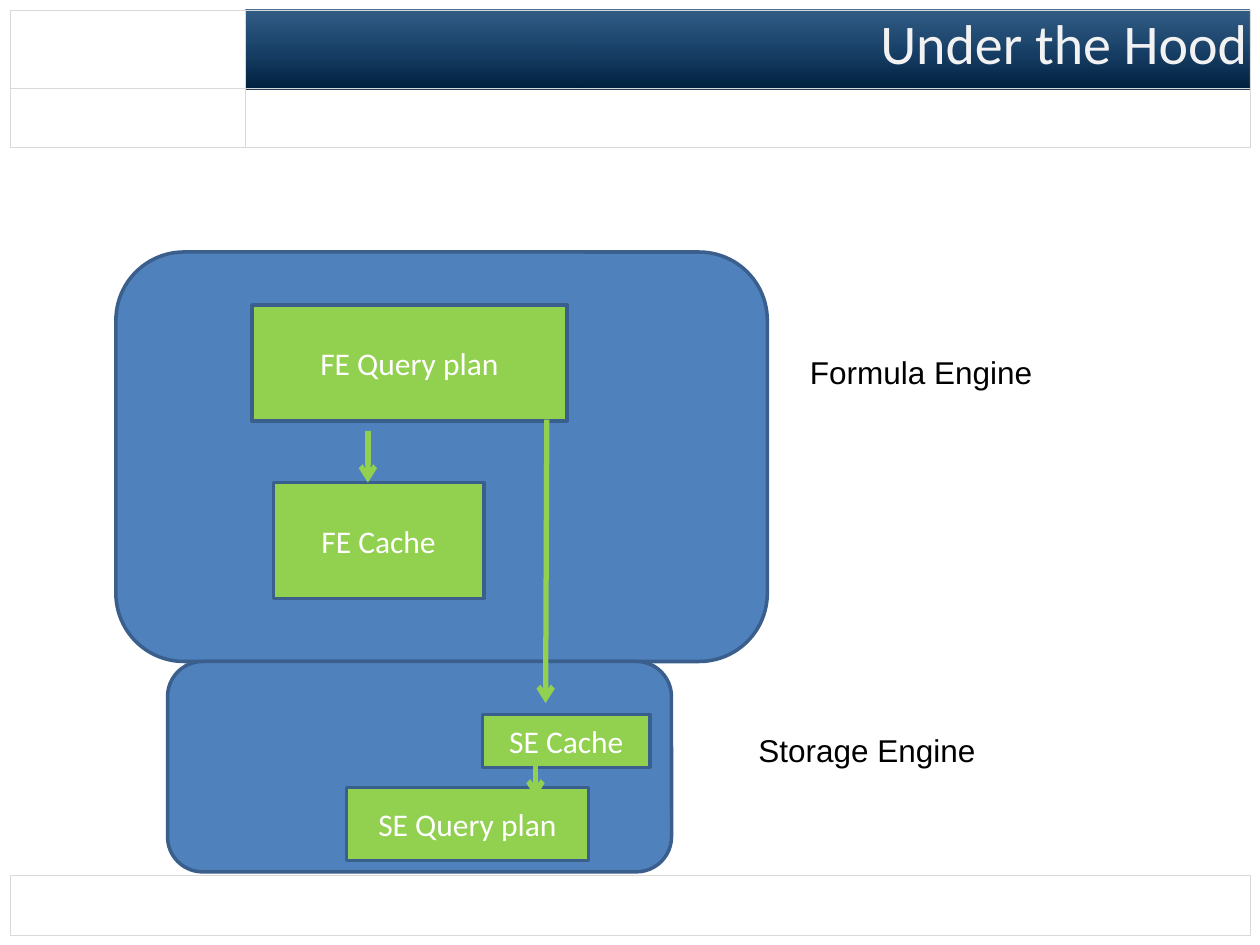
from lxml import etree
from pptx import Presentation
from pptx.dml.color import RGBColor
from pptx.enum.shapes import MSO_CONNECTOR as Connector, MSO_SHAPE as Shape
from pptx.enum.text import MSO_ANCHOR as Anchor, MSO_AUTO_SIZE as AutoSize, PP_ALIGN as Align
from pptx.oxml.ns import qn
from pptx.util import Inches, Pt

COLORS = {
    "frame": "D9D9D9",
    "engine": "4F81BD",
    "outline": "3A5F8C",
    "step": "92D050",
    "white": "FFFFFF",
    "title": "F2F2F2",
    "black": "000000",
    "banner_dark": "00203E",
    "banner_middle": "002E59",
    "banner_light": "003669",
}


def rgb(name):
    return RGBColor.from_string(COLORS[name])


def write_text(shape, text, font="Calibri", size=18, color="white",
               align=Align.CENTER, anchor=Anchor.MIDDLE):
    frame = shape.text_frame
    frame.word_wrap = True
    frame.vertical_anchor = anchor
    paragraph = frame.paragraphs[0]
    paragraph.alignment = align
    run = paragraph.add_run()
    run.text = text
    run.font.name = font
    run.font.size = Pt(size)
    run.font.color.rgb = rgb(color)


def add_box(slide, box, kind=Shape.RECTANGLE, fill=None, line=None, width=2):
    shape = slide.shapes.add_shape(kind, *map(Inches, box))
    shape.shadow.inherit = False
    if fill:
        shape.fill.solid()
        shape.fill.fore_color.rgb = rgb(fill)
    else:
        shape.fill.background()
    if line:
        shape.line.color.rgb = rgb(line)
        shape.line.width = Pt(width)
    else:
        shape.line.fill.background()
    return shape


def add_text_box(slide, box, text, **text_format):
    shape = slide.shapes.add_textbox(*map(Inches, box))
    write_text(shape, text, **text_format)
    return shape


def add_line(slide, start, end, color, width, arrow=False):
    line = slide.shapes.add_connector(Connector.STRAIGHT, *map(Inches, start + end))
    line.line.color.rgb = rgb(color)
    line.line.width = Pt(width)
    if arrow:
        etree.SubElement(line.line._get_or_add_ln(), qn("a:tailEnd"), type="arrow")
    etree.SubElement(line._element.spPr, qn("a:effectLst"))


def fill_gradient(shape, stops, angle):
    shape.fill.gradient()
    gradient = shape._element.spPr.find(qn("a:gradFill"))
    stop_list = gradient.find(qn("a:gsLst"))
    for stop in list(stop_list):
        stop_list.remove(stop)
    for position, color, opacity in stops:
        stop = etree.SubElement(stop_list, qn("a:gs"), pos=str(position * 1000))
        value = etree.SubElement(stop, qn("a:srgbClr"), val=COLORS[color])
        etree.SubElement(value, qn("a:alpha"), val=str(opacity * 1000))
    shape.fill.gradient_angle = angle


def add_frame(slide, box):
    left, top, width, height = box
    title_height, band_height, split = 0.62, 0.47, 1.87
    banner = add_box(slide, (left + split, top, width - split, title_height + 0.01))
    fill_gradient(banner, [(0, "banner_dark", 100), (50, "banner_middle", 90),
                           (100, "banner_light", 80)], 90)
    bands = [(top, title_height), (top + title_height, band_height),
             (top + height - band_height, band_height)]
    for band_top, band in bands:
        add_box(slide, (left, band_top, width, band), line="frame", width=0.25)
    add_line(slide, (left + split, top),
             (left + split, top + title_height + band_height), "frame", 0.25)


def add_engine(slide, box, steps, label, label_box):
    left, top = box[:2]
    add_box(slide, box, Shape.ROUNDED_RECTANGLE, "engine", "outline")
    for text, (x, y, width, height) in steps:
        step = add_box(slide, (left + x, top + y, width, height),
                       fill="step", line="outline")
        write_text(step, text)
    x, y, width, height = label_box
    caption = add_text_box(slide, (left + x, top + y, width, height), label,
                           font="Arial", color="black", align=Align.LEFT, anchor=Anchor.TOP)
    caption.text_frame.auto_size = AutoSize.SHAPE_TO_FIT_TEXT


def add_flow(slide, box):
    left, top = box[:2]
    add_engine(slide, (left, top, 5.17, 3.25),
               [("FE Query plan", (1.08, 0.42, 2.5, 0.92)),
                ("FE Cache", (1.25, 1.83, 1.67, 0.92))],
               "Formula Engine", (5.41, 0.75, 2.75, 0.4))
    add_engine(slide, (left + 0.41, top + 3.25, 4, 1.67),
               [("SE Cache", (2.5, 0.42, 1.33, 0.42)),
                ("SE Query plan", (1.42, 1, 1.92, 0.58))],
               "Storage Engine", (4.59, 0.5, 2.92, 0.4))
    arrows = [((2, 1.42), (2, 1.83)),
              ((3.42, 1.33), (3.41, 3.58)),
              ((3.33, 4), (3.33, 4.33))]
    for (x1, y1), (x2, y2) in arrows:
        add_line(slide, (left + x1, top + y1), (left + x2, top + y2), "step", 3, arrow=True)


def main():
    presentation = Presentation()
    presentation.slide_width = Inches(10)
    presentation.slide_height = Inches(7.5)
    slide = presentation.slides.add_slide(presentation.slide_layouts[6])
    add_frame(slide, (0.08, 0.08, 9.84, 7.34))
    add_flow(slide, (0.92, 2, 8.16, 4.92))
    add_text_box(slide, (1, 0, 9, 0.67), "Under the Hood",
                 size=32, color="title", align=Align.RIGHT)
    presentation.save("out.pptx")


if __name__ == "__main__":
    main()
